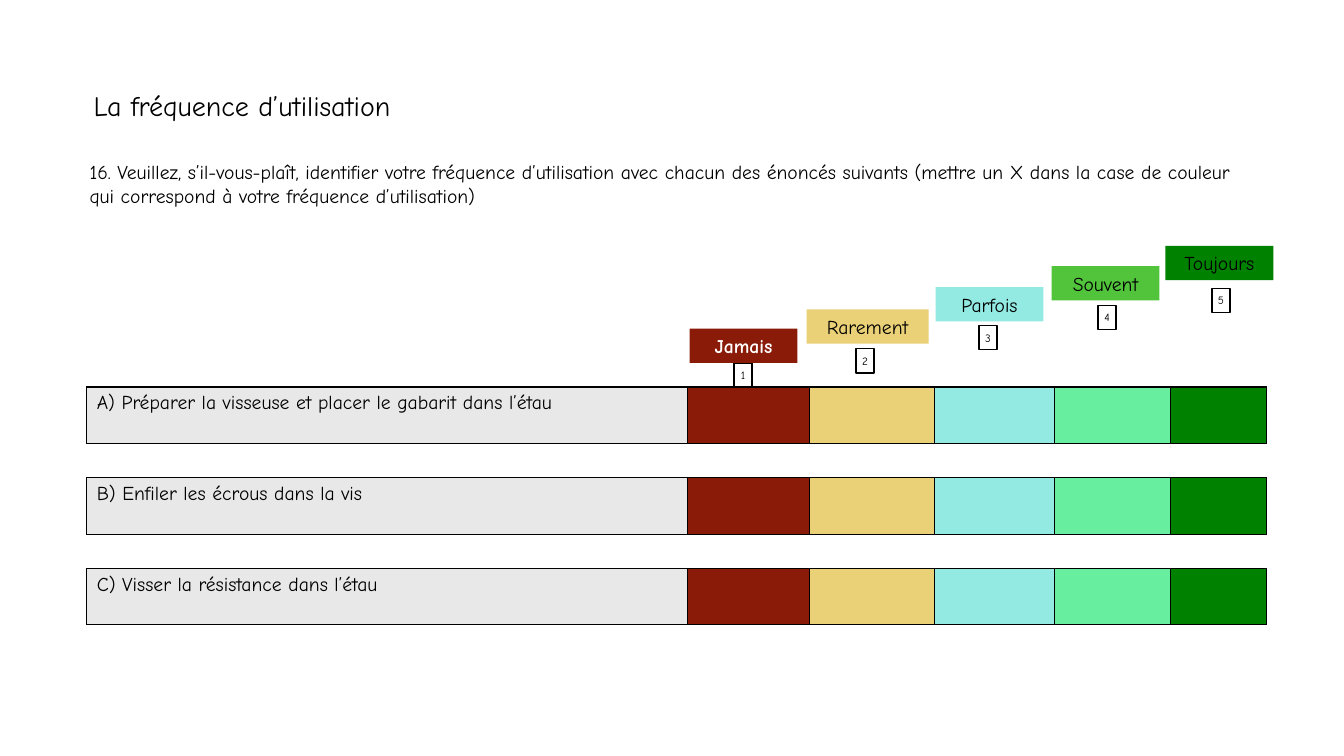
import pptx
import pptx.dml.color
import pptx.enum.shapes
import pptx.enum.text
import pptx.oxml
import pptx.oxml.ns
import pptx.util
from pptx.util import Inches

TITLE = "La fréquence d’utilisation"
QUESTION = (
    "16. Veuillez, s’il-vous-plaît, identifier votre fréquence d’utilisation "
    "avec chacun des énoncés suivants (mettre un X dans la case de couleur "
    "qui correspond à votre fréquence d’utilisation)"
)
STATEMENTS = [
    "A) Préparer la visseuse et placer le gabarit dans l’étau",
    "B) Enfiler les écrous dans la vis",
    "C) Visser la résistance dans l’étau",
]
# Label, label colour, cell colour, label (left, top, width), number (left, top)
FREQUENCIES = [
    ("Jamais", "8B1B09", "8B1B09", (6.84, 3.26, 1.07), (7.28, 3.6)),
    ("Rarement", "EAD076", "EAD076", (8, 3.07, 1.21), (8.49, 3.46)),
    ("Parfois", "93EAE2", "93EAE2", (9.28, 2.85, 1.07), (9.71, 3.23)),
    ("Souvent", "51C43C", "68EE9F", (10.43, 2.64, 1.07), (10.89, 3.03)),
    ("Toujours", "008200", "008200", (11.56, 2.44, 1.07), (12.02, 2.86)),
]
THEME = {
    "font": "Comic Neue",
    "text": "000000",
    "inverse": "FFFFFF",
    "line": "000000",
    "statement": "E8E8E8",
    "title_size": 20,
    "body_size": 14,
    "number_size": 8,
    "spacer_size": 10,
    "line_width": 1,
}
COLUMN_WIDTHS = [5.96, 1.21, 1.24, 1.19, 1.15, 0.95]
STATEMENT_HEIGHT, SPACER_HEIGHT = 0.56, 0.34
LABEL_HEIGHT = 0.34
NUMBER_SIZE = (0.18, 0.24)

ALIGN = pptx.enum.text.PP_ALIGN
ANCHOR = pptx.enum.text.MSO_ANCHOR


def color(value):
    return pptx.dml.color.RGBColor.from_string(value)


def write(frame, text, size=THEME["body_size"], ink=THEME["text"], bold=False, align=ALIGN.LEFT):
    frame.word_wrap = True
    paragraph = frame.paragraphs[0]
    paragraph.alignment = align
    run = paragraph.add_run()
    run.text = text
    run.font.name = THEME["font"]
    run.font.size = pptx.util.Pt(size)
    run.font.bold = bold
    run.font.color.rgb = color(ink)


def add_text(slide, text, box, **style):
    shape = slide.shapes.add_textbox(*map(Inches, box))
    write(shape.text_frame, text, **style)


def add_box(slide, text, box, fill=None, margin=None, **style):
    """Add a rectangle: filled without a line, or outlined without a fill."""
    shape = slide.shapes.add_shape(
        pptx.enum.shapes.MSO_SHAPE.RECTANGLE, *map(Inches, box))
    shape.shadow.inherit = False
    if fill:
        shape.fill.solid()
        shape.fill.fore_color.rgb = color(fill)
        shape.line.fill.background()
    else:
        shape.fill.background()
        shape.line.color.rgb = color(THEME["line"])
        shape.line.width = pptx.util.Pt(THEME["line_width"])
    frame = shape.text_frame
    if margin is not None:
        frame.margin_left = frame.margin_right = Inches(margin)
        frame.margin_top = frame.margin_bottom = Inches(margin)
    frame.vertical_anchor = ANCHOR.MIDDLE
    write(frame, text, align=ALIGN.CENTER, **style)


def set_borders(cell, visible):
    properties = cell._tc.get_or_add_tcPr()
    width = pptx.util.Pt(THEME["line_width"])
    for position, side in enumerate(("lnL", "lnR", "lnT", "lnB")):
        paint = "<a:noFill/>"
        if side in visible:
            paint = f'<a:solidFill><a:srgbClr val="{THEME["line"]}"/></a:solidFill>'
        border = pptx.oxml.parse_xml(
            f'<a:{side} {pptx.oxml.ns.nsdecls("a")} w="{width}">{paint}</a:{side}>')
        properties.insert(position, border)


def add_answer_table(slide):
    row_count = 2 * len(STATEMENTS) - 1
    heights = [SPACER_HEIGHT if row % 2 else STATEMENT_HEIGHT for row in range(row_count)]
    table = slide.shapes.add_table(
        row_count, len(COLUMN_WIDTHS), Inches(0.86), Inches(3.84),
        Inches(sum(COLUMN_WIDTHS)), Inches(sum(heights))).table
    table.first_row = table.horz_banding = False
    for column, width in zip(table.columns, COLUMN_WIDTHS):
        column.width = Inches(width)
    fills = [THEME["statement"]] + [frequency[2] for frequency in FREQUENCIES]
    for row, height in enumerate(heights):
        table.rows[row].height = Inches(height)
        is_spacer = row % 2 == 1
        for column, fill in enumerate(fills):
            cell = table.cell(row, column)
            if is_spacer:
                cell.fill.background()
                set_borders(cell, ("lnT", "lnB"))
            else:
                cell.fill.solid()
                cell.fill.fore_color.rgb = color(fill)
                set_borders(cell, ("lnL", "lnR", "lnT", "lnB"))
            if column == 0 and not is_spacer:
                write(cell.text_frame, STATEMENTS[row // 2])
            else:
                cell.text_frame.paragraphs[0].font.size = pptx.util.Pt(THEME["spacer_size"])


def main():
    presentation = pptx.Presentation()
    presentation.slide_width = Inches(13.33)
    presentation.slide_height = Inches(7.5)
    slide = presentation.slides.add_slide(presentation.slide_layouts[6])

    add_answer_table(slide)
    add_text(slide, QUESTION, (0.79, 1.54, 11.57, 0.57))
    add_text(slide, TITLE, (0.83, 0.83, 7.73, 0.44), size=THEME["title_size"])
    for number, (label, fill, _, label_box, number_at) in enumerate(FREQUENCIES, 1):
        is_first = number == 1
        add_box(slide, str(number), number_at + NUMBER_SIZE, margin=0,
                size=THEME["number_size"])
        add_box(slide, label, label_box + (LABEL_HEIGHT,), fill=fill, bold=is_first,
                ink=THEME["inverse"] if is_first else THEME["text"])

    presentation.save("out.pptx")


if __name__ == "__main__":
    main()
